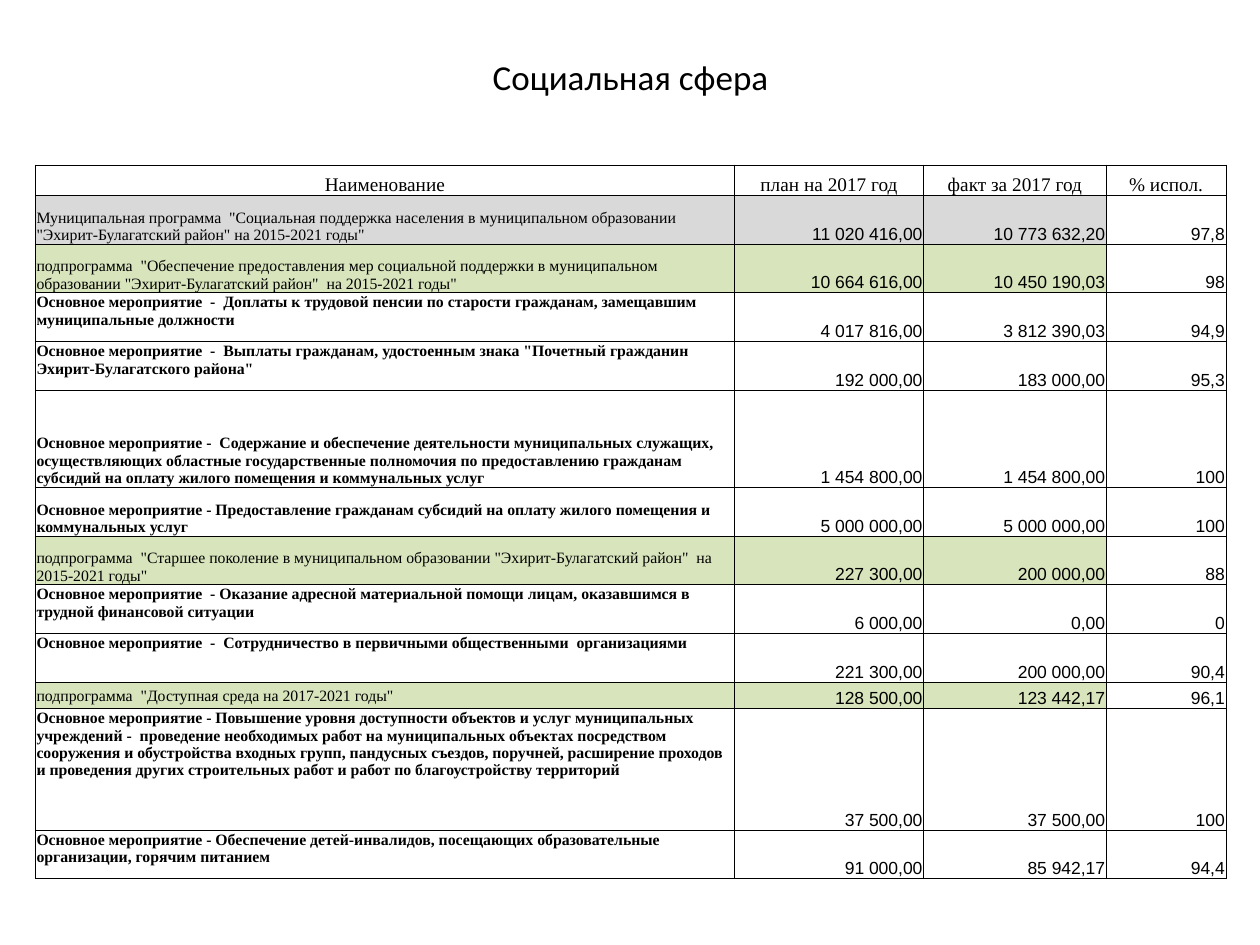
"""Build the slide with the table of social programme spending."""
import dataclasses
import typing

import pptx
import pptx.dml.color
import pptx.enum.text
import pptx.oxml
import pptx.oxml.ns
import pptx.util

ANCHOR = pptx.enum.text.MSO_ANCHOR
ALIGN = pptx.enum.text.PP_ALIGN
SLIDE_WIDTH, SLIDE_HEIGHT = 10, 7.5
TABLE_LEFT, TABLE_TOP = 0.28, 1.31
COLUMN_WIDTHS = (5.55, 1.5, 1.45, 0.95)
HEADER_HEIGHT = 0.24
LINE_HEIGHT = 0.1933
BLACK, GREY, GREEN = "000000", "D9D9D9", "D8E4BC"
SERIF, SANS = "Times New Roman", "Arial"
HEADINGS = ("Наименование", "план на 2017 год", "факт за 2017 год", "% испол.")


@dataclasses.dataclass
class BudgetRow:
    """One spending item; a shaded item is a programme, a plain one an activity."""

    name: str
    plan: str
    fact: str
    percent: str
    lines: float = 2
    fill: typing.Optional[str] = None
    anchor: ANCHOR = ANCHOR.TOP


@dataclasses.dataclass
class TextStyle:
    """The look of the text in a cell."""

    font: str
    size: float
    align: ALIGN
    anchor: ANCHOR = ANCHOR.BOTTOM
    bold: bool = False


ROWS = (
    BudgetRow('Муниципальная программа  "Социальная поддержка населения в муниципальном образовании  '
              '"Эхирит-Булагатский район" на 2015-2021 годы"',
              "11 020 416,00", "10 773 632,20", "97,8", fill=GREY, anchor=ANCHOR.BOTTOM),
    BudgetRow('подпрограмма  "Обеспечение предоставления мер социальной поддержки в муниципальном '
              'образовании "Эхирит-Булагатский район"  на 2015-2021 годы"',
              "10 664 616,00", "10 450 190,03", "98", fill=GREEN, anchor=ANCHOR.BOTTOM),
    BudgetRow("Основное мероприятие  -  Доплаты к трудовой пенсии по старости гражданам, "
              "замещавшим муниципальные должности",
              "4 017 816,00", "3 812 390,03", "94,9"),
    BudgetRow('Основное мероприятие  -  Выплаты гражданам, удостоенным знака "Почетный гражданин '
              'Эхирит-Булагатского района"',
              "192 000,00", "183 000,00", "95,3"),
    BudgetRow("Основное мероприятие -  Содержание и обеспечение деятельности муниципальных служащих, "
              "осуществляющих областные государственные полномочия по предоставлению гражданам "
              "субсидий на оплату жилого помещения и коммунальных услуг",
              "1 454 800,00", "1 454 800,00", "100", lines=4, anchor=ANCHOR.BOTTOM),
    BudgetRow("Основное мероприятие - Предоставление гражданам субсидий на оплату жилого помещения "
              "и коммунальных услуг",
              "5 000 000,00", "5 000 000,00", "100", anchor=ANCHOR.BOTTOM),
    BudgetRow('подпрограмма  "Старшее поколение в муниципальном образовании "Эхирит-Булагатский район"  '
              'на 2015-2021 годы"',
              "227 300,00", "200 000,00", "88", fill=GREEN, anchor=ANCHOR.BOTTOM),
    BudgetRow("Основное мероприятие  - Оказание адресной материальной помощи лицам, оказавшимся "
              "в трудной финансовой ситуации",
              "6 000,00", "0,00", "0"),
    BudgetRow("Основное мероприятие  -  Сотрудничество в первичными общественными  организациями",
              "221 300,00", "200 000,00", "90,4"),
    BudgetRow('подпрограмма  "Доступная среда на 2017-2021 годы"',
              "128 500,00", "123 442,17", "96,1", lines=1.08, fill=GREEN, anchor=ANCHOR.MIDDLE),
    BudgetRow("Основное мероприятие - Повышение уровня доступности объектов и услуг муниципальных "
              "учреждений -  проведение необходимых работ на муниципальных объектах посредством "
              "сооружения и обустройства входных групп, пандусных съездов, поручней, расширение "
              "проходов и проведения других строительных работ и работ по благоустройству территорий",
              "37 500,00", "37 500,00", "100", lines=5),
    BudgetRow("Основное мероприятие - Обеспечение детей-инвалидов, посещающих образовательные "
              "организации, горячим питанием",
              "91 000,00", "85 942,17", "94,4"),
)


def color(value: str) -> pptx.dml.color.RGBColor:
    """Turn a hex string into a colour."""
    return pptx.dml.color.RGBColor.from_string(value)


def format_paragraph(paragraph, font: str, size: float, align: ALIGN, bold: bool = False) -> None:
    """Align a paragraph and format its runs."""
    paragraph.alignment = align
    for run in paragraph.runs:
        run.font.name = font
        run.font.size = pptx.util.Pt(size)
        run.font.bold = bold
        run.font.color.rgb = color(BLACK)


def add_borders(cell) -> None:
    """Draw a thin black line on each side of a cell."""
    properties = cell._tc.get_or_add_tcPr()
    for side in "LRTB":
        properties.append(pptx.oxml.parse_xml(
            f'<a:ln{side} {pptx.oxml.ns.nsdecls("a")} w="{pptx.util.Pt(0.5)}">'
            f'<a:solidFill><a:srgbClr val="{BLACK}"/></a:solidFill></a:ln{side}>'))


def fill_cell(cell, text: str, style: TextStyle, fill: typing.Optional[str] = None) -> None:
    """Write and format one table cell."""
    cell.margin_left = cell.margin_right = cell.margin_top = pptx.util.Inches(0.01)
    cell.margin_bottom = 0
    cell.vertical_anchor = style.anchor
    cell.text_frame.text = text
    format_paragraph(cell.text_frame.paragraphs[0], style.font, style.size, style.align, style.bold)
    add_borders(cell)
    if fill:
        cell.fill.solid()
        cell.fill.fore_color.rgb = color(fill)
    else:
        cell.fill.background()


def add_title(slide, text: str) -> None:
    """Place and format the title of the slide."""
    title = slide.shapes.title
    title.left, title.top = pptx.util.Inches(0.51), pptx.util.Inches(0.3)
    title.width, title.height = pptx.util.Inches(8.99), pptx.util.Inches(0.61)
    title.text_frame.text = text
    title.text_frame.vertical_anchor = ANCHOR.MIDDLE
    format_paragraph(title.text_frame.paragraphs[0], "Calibri", 20, ALIGN.CENTER)


def add_budget_table(slide) -> None:
    """Draw the table with its headings and spending items."""
    heights = [HEADER_HEIGHT] + [row.lines * LINE_HEIGHT for row in ROWS]
    frame = slide.shapes.add_table(
        len(heights), len(COLUMN_WIDTHS), pptx.util.Inches(TABLE_LEFT), pptx.util.Inches(TABLE_TOP),
        pptx.util.Inches(sum(COLUMN_WIDTHS)), pptx.util.Inches(sum(heights)))
    table = frame.table
    table.first_row = table.horz_banding = False
    for column, width in zip(table.columns, COLUMN_WIDTHS):
        column.width = pptx.util.Inches(width)
    for table_row, height in zip(table.rows, heights):
        table_row.height = pptx.util.Inches(height)

    heading_style = TextStyle(SERIF, 11, ALIGN.CENTER)
    number_style = TextStyle(SANS, 10, ALIGN.RIGHT)
    for column, heading in enumerate(HEADINGS):
        fill_cell(table.cell(0, column), heading, heading_style)
    for index, row in enumerate(ROWS, start=1):
        name_style = TextStyle(SERIF, 9, ALIGN.LEFT, row.anchor, bold=row.fill is None)
        fill_cell(table.cell(index, 0), row.name, name_style, row.fill)
        fill_cell(table.cell(index, 1), row.plan, number_style, row.fill)
        fill_cell(table.cell(index, 2), row.fact, number_style, row.fill)
        fill_cell(table.cell(index, 3), row.percent, number_style)


def main() -> None:
    """Create and save the presentation."""
    presentation = pptx.Presentation()
    presentation.slide_width = pptx.util.Inches(SLIDE_WIDTH)
    presentation.slide_height = pptx.util.Inches(SLIDE_HEIGHT)
    slide = presentation.slides.add_slide(presentation.slide_layouts.get_by_name("Title Only"))
    add_title(slide, "Социальная сфера")
    add_budget_table(slide)
    presentation.save("out.pptx")


if __name__ == "__main__":
    main()
